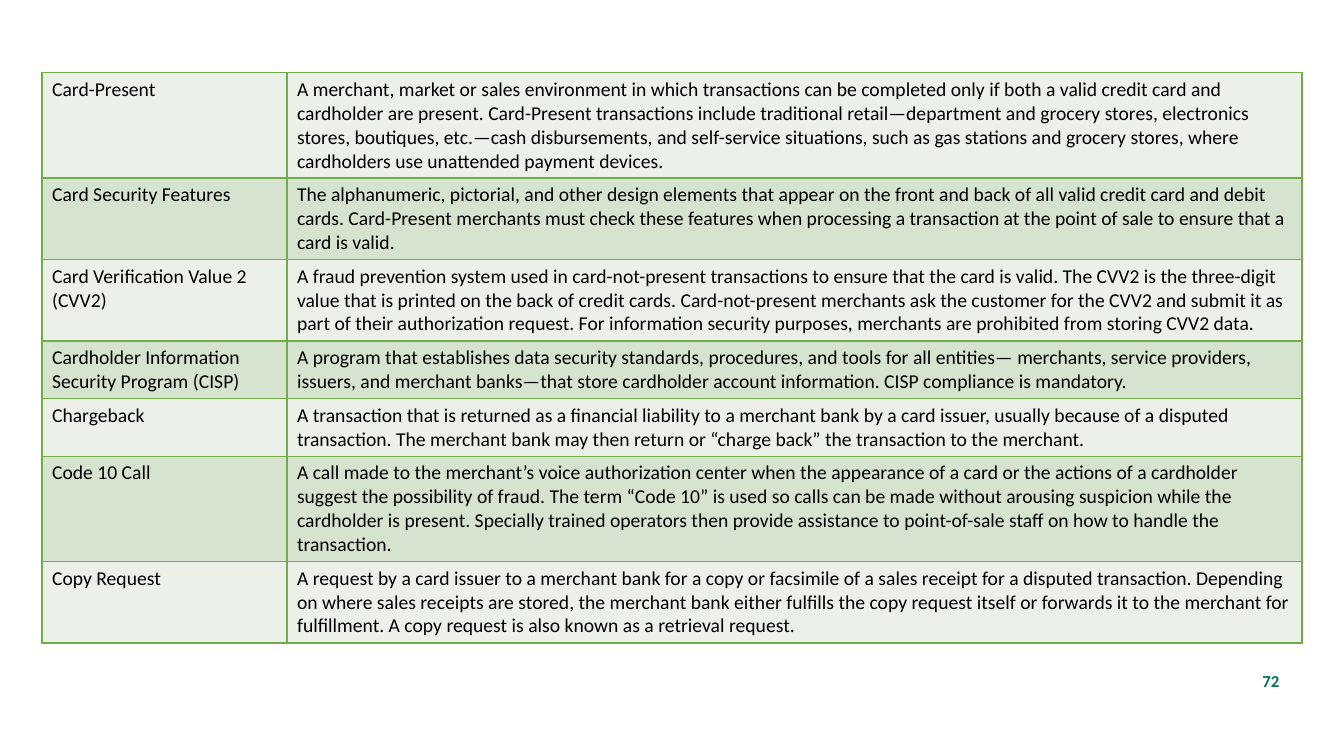
from dataclasses import dataclass

from lxml import etree
from pptx import Presentation
from pptx import util as u
from pptx.dml.color import RGBColor
from pptx.enum import text as t
from pptx.oxml import ns


@dataclass(frozen=True)
class Theme:
    font: str = "Calibri"
    ink: str = "000000"
    accent: str = "007851"
    rule: str = "70AD47"
    bands: tuple = ("EBF1E9", "D5E3CF")
    body: int = 14
    small: int = 12


# Term, meaning, and the number of text lines the row holds
TERMS = [
    ("Card-Present",
     "A merchant, market or sales environment in which transactions can be completed only if "
     "both a valid credit card and cardholder are present. Card-Present transactions include "
     "traditional retail—department and grocery stores, electronics stores, boutiques, "
     "etc.—cash disbursements, and self-service situations, such as gas stations and grocery "
     "stores, where cardholders use unattended payment devices.", 4),
    ("Card Security Features",
     "The alphanumeric, pictorial, and other design elements that appear on the front and back "
     "of all valid credit card and debit cards. Card-Present merchants must check these "
     "features when processing a transaction at the point of sale to ensure that a card is "
     "valid.", 3),
    ("Card Verification Value 2 (CVV2)",
     "A fraud prevention system used in card-not-present transactions to ensure that the card "
     "is valid. The CVV2 is the three-digit value that is printed on the back of credit cards. "
     "Card-not-present merchants ask the customer for the CVV2 and submit it as part of their "
     "authorization request. For information security purposes, merchants are prohibited from "
     "storing CVV2 data.", 3),
    ("Cardholder Information Security Program (CISP)",
     "A program that establishes data security standards, procedures, and tools for all "
     "entities— merchants, service providers, issuers, and merchant banks—that store "
     "cardholder account information. CISP compliance is mandatory.", 2),
    ("Chargeback",
     "A transaction that is returned as a financial liability to a merchant bank by a card "
     "issuer, usually because of a disputed transaction. The merchant bank may then return or "
     "“charge back” the transaction to the merchant.", 2),
    ("Code 10 Call",
     "A call made to the merchant’s voice authorization center when the appearance of a card "
     "or the actions of a cardholder suggest the possibility of fraud. The term “Code 10” is "
     "used so calls can be made without arousing suspicion while the cardholder is present. "
     "Specially trained operators then provide assistance to point-of-sale staff on how to "
     "handle the transaction.", 4),
    ("Copy Request",
     "A request by a card issuer to a merchant bank for a copy or facsimile of a sales receipt "
     "for a disputed transaction. Depending on where sales receipts are stored, the merchant "
     "bank either fulfills the copy request itself or forwards it to the merchant for "
     "fulfillment. A copy request is also known as a retrieval request.", 3),
]


def write(frame, words, *, font, size, color, bold=False, align=t.PP_ALIGN.LEFT):
    frame.word_wrap = True
    para = frame.paragraphs[0]
    para.alignment = align
    run = para.add_run()
    run.text = words
    run.font.name = font
    run.font.size = u.Pt(size)
    run.font.bold = bold
    run.font.color.rgb = RGBColor.from_string(color)


def border(cell, color, width=1):
    """Draw all four edges; they must come before the fill in the cell's XML."""
    props = cell._tc.get_or_add_tcPr()
    for spot, side in enumerate(("lnL", "lnR", "lnT", "lnB")):
        line = etree.Element(ns.qn(f"a:{side}"), w=str(u.Pt(width)))
        fill = etree.SubElement(line, ns.qn("a:solidFill"))
        etree.SubElement(fill, ns.qn("a:srgbClr"), val=color)
        props.insert(spot, line)


class Page:
    def __init__(self, deck, theme):
        self.theme = theme
        self.slide = deck.slides.add_slide(deck.slide_layouts[6])

    def label(self, words, left, top, width, height, **style):
        box = self.slide.shapes.add_textbox(*map(u.Pt, (left, top, width, height)))
        box.text_frame.vertical_anchor = t.MSO_ANCHOR.MIDDLE
        write(box.text_frame, words, font=self.theme.font, **style)

    def table(self, terms, left, top, widths, pitch=17, pad=7.2):
        look = self.theme
        heights = [pitch * lines + pad for *_, lines in terms]
        area = map(u.Pt, (left, top, sum(widths), sum(heights)))
        grid = self.slide.shapes.add_table(len(terms), len(widths), *area).table
        grid.first_row = False
        for col, width in zip(grid.columns, widths):
            col.width = u.Pt(width)
        for r, (*words, _) in enumerate(terms):
            grid.rows[r].height = u.Pt(heights[r])
            for c, word in enumerate(words):
                cell = grid.cell(r, c)
                cell.fill.solid()
                cell.fill.fore_color.rgb = RGBColor.from_string(look.bands[r % 2])
                border(cell, look.rule)
                write(cell.text_frame, word, font=look.font, size=look.body, color=look.ink)


def main():
    deck = Presentation()
    deck.slide_width, deck.slide_height = u.Pt(960), u.Pt(540)
    theme = Theme()
    page = Page(deck, theme)
    page.label("72", 854, 476, 67, 21, size=theme.small, color=theme.accent,
               bold=True, align=t.PP_ALIGN.RIGHT)
    page.table(TERMS, 30, 52, (175, 725))
    deck.save("out.pptx")


if __name__ == "__main__":
    main()
